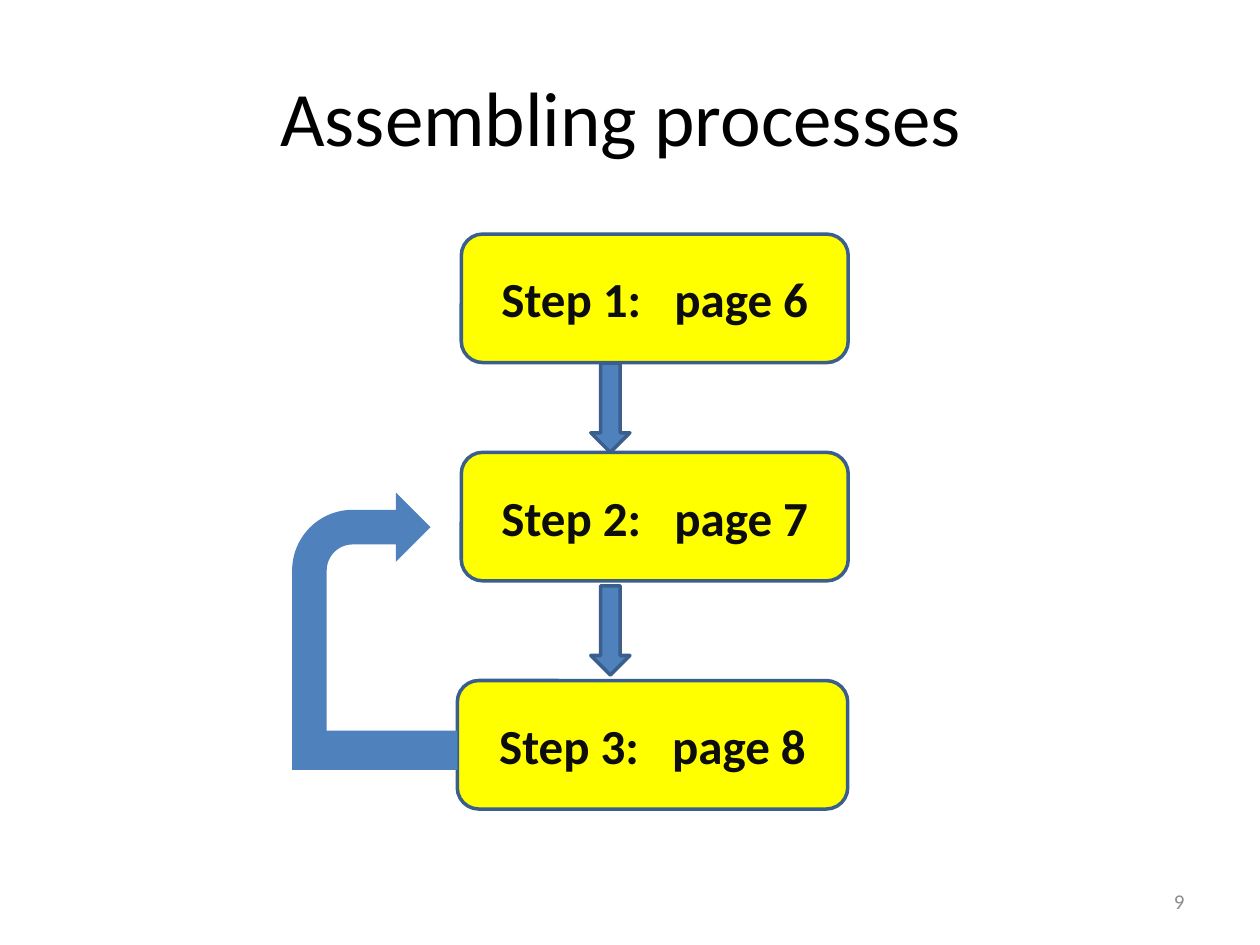
"""Build the slide "Assembling processes": three steps with a loop back to step 2."""
from dataclasses import dataclass

from pptx import Presentation
from pptx.dml.color import RGBColor
from pptx.enum.shapes import MSO_SHAPE
from pptx.enum.text import MSO_ANCHOR, PP_ALIGN
from pptx.util import Cm, Pt

ROUNDED = MSO_SHAPE.ROUNDED_RECTANGLE
DOWN_ARROW = MSO_SHAPE.DOWN_ARROW
BENT_ARROW = MSO_SHAPE.BENT_ARROW
RECTANGLE = MSO_SHAPE.RECTANGLE
MIDDLE = MSO_ANCHOR.MIDDLE
CENTER, RIGHT = PP_ALIGN.CENTER, PP_ALIGN.RIGHT

FONT = "Calibri"
BLACK, INK, GREY = "000000", "0D0D0D", "8C8C8C"
YELLOW, BLUE, OUTLINE = "FFFF00", "4F81BD", "3A5F8C"


@dataclass(frozen=True)
class Box:
    """Position and size in centimetres."""
    left: float
    top: float
    width: float
    height: float

    def lengths(self):
        """Return the four values as lengths."""
        return [Cm(v) for v in (self.left, self.top, self.width, self.height)]


@dataclass(frozen=True)
class Step:
    """A labelled step of the process."""
    text: str
    box: Box


STEPS = [
    Step("Step 1:   page 6", Box(9.3, 4.72, 7.8, 2.59)),
    Step("Step 2:   page 7", Box(9.3, 9.12, 7.8, 2.59)),
    Step("Step 3:   page 8", Box(9.22, 13.72, 7.87, 2.59)),
]
DOWN_ARROWS = [Box(11.91, top, 0.79, 1.8) for top in (7.32, 11.81)]
LOOP_ARROW = Box(5.89, 9.93, 2.79, 5.59)
LOOP_BASE = Box(5.89, 14.73, 3.33, 0.79)


def rgb(value: str) -> RGBColor:
    """Turn a hex string into a colour."""
    return RGBColor.from_string(value)


def write(sp, text: str, size: int, color: str, align=CENTER, bold: bool = False) -> None:
    """Put one formatted, vertically centred paragraph into a shape."""
    tf = sp.text_frame
    tf.word_wrap = True
    tf.vertical_anchor = MIDDLE
    p = tf.paragraphs[0]
    p.text = text
    p.alignment = align
    p.font.name = FONT
    p.font.size = Pt(size)
    p.font.bold = bold
    p.font.color.rgb = rgb(color)


def add_shape(s, kind, box: Box, fill: str, outlined: bool = True):
    """Add a flat preset shape, with or without the outline."""
    sp = s.shapes.add_shape(kind, *box.lengths())
    sp.shadow.inherit = False
    sp.fill.solid()
    sp.fill.fore_color.rgb = rgb(fill)
    if outlined:
        sp.line.color.rgb = rgb(OUTLINE)
        sp.line.width = Pt(2)
    else:
        sp.line.fill.background()
    return sp


def main() -> None:
    """Build and save the slide."""
    prs = Presentation()
    prs.slide_width, prs.slide_height = Cm(25.4), Cm(19.05)
    s = prs.slides.add_slide(prs.slide_layouts[6])

    title = s.shapes.add_textbox(*Box(1.09, 0.74, 22.86, 3.18).lengths())
    write(title, "Assembling processes", 44, BLACK)
    for step in STEPS:
        sp = add_shape(s, ROUNDED, step.box, YELLOW)
        write(sp, step.text, 28, INK, bold=True)
    for box in DOWN_ARROWS:
        add_shape(s, DOWN_ARROW, box, BLUE)
    add_shape(s, BENT_ARROW, LOOP_ARROW, BLUE, outlined=False)
    add_shape(s, RECTANGLE, LOOP_BASE, BLUE, outlined=False)
    number = s.shapes.add_textbox(*Box(18.21, 17.65, 5.92, 1.02).lengths())
    write(number, "9", 12, GREY, RIGHT)

    prs.save("out.pptx")


if __name__ == "__main__":
    main()
